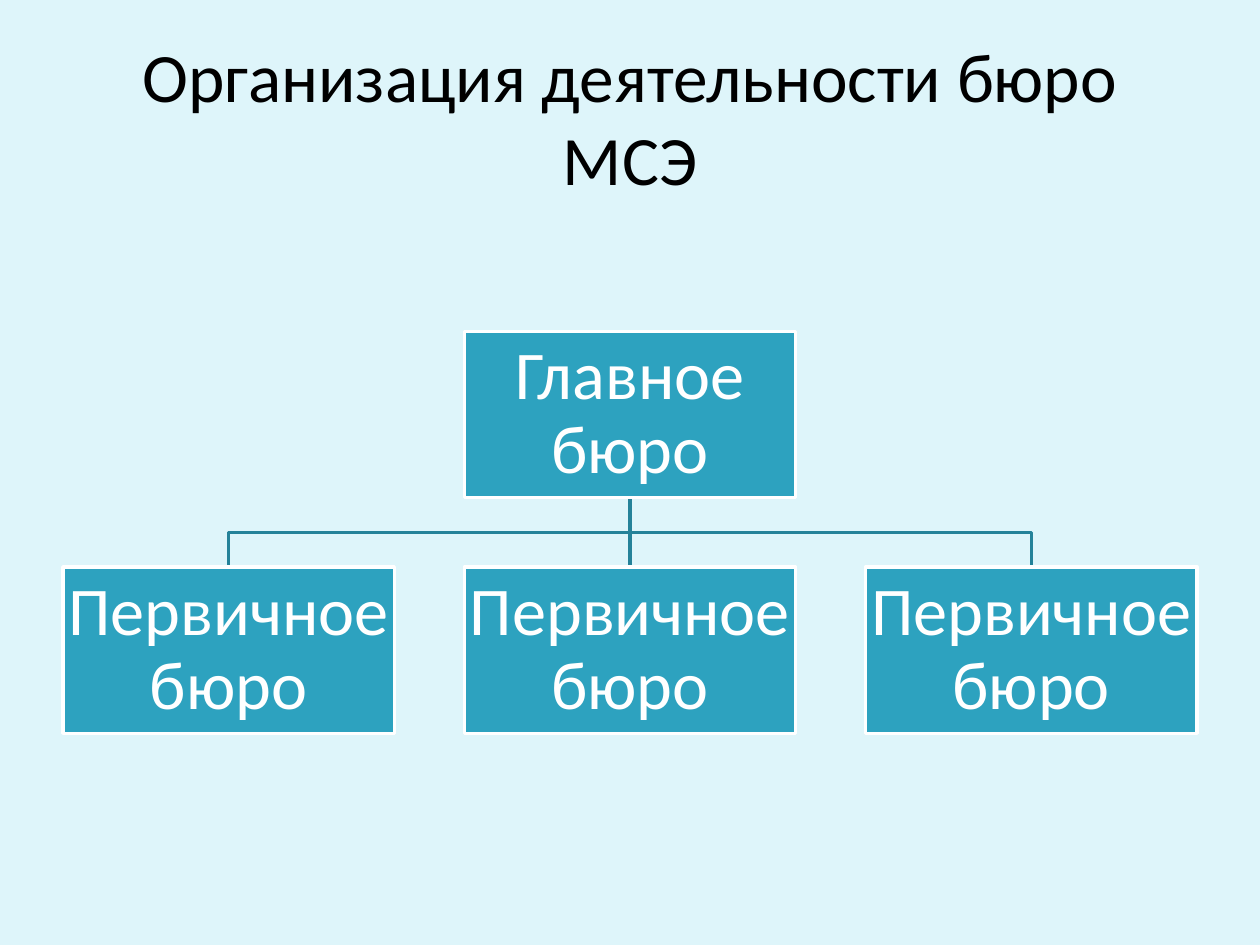
from lxml import etree
from pptx import Presentation
from pptx.dml.color import RGBColor
from pptx.enum.shapes import MSO_CONNECTOR, MSO_SHAPE
from pptx.enum.text import MSO_ANCHOR, MSO_AUTO_SIZE, PP_ALIGN
from pptx.oxml.ns import qn
from pptx.util import Inches, Pt

STRAIGHT, RECTANGLE = MSO_CONNECTOR.STRAIGHT, MSO_SHAPE.RECTANGLE
MIDDLE, CENTER, NO_AUTOFIT = MSO_ANCHOR.MIDDLE, PP_ALIGN.CENTER, MSO_AUTO_SIZE.NONE

BACKGROUND = RGBColor(0xDE, 0xF5, 0xFA)
TEAL = RGBColor(0x2D, 0xA2, 0xBF)
DARK_TEAL = RGBColor(0x24, 0x82, 0x99)
WHITE = RGBColor(0xFF, 0xFF, 0xFF)
BLACK = RGBColor(0x00, 0x00, 0x00)

deck = Presentation()
deck.slide_width, deck.slide_height = Inches(10), Inches(7.5)
page = deck.slides.add_slide(deck.slide_layouts[5])
page.background.fill.solid()
page.background.fill.fore_color.rgb = BACKGROUND

# Grid: three columns between the margins, two rows of boxes
margin = Inches(0.5)
box_width, box_height = Inches(2.63), Inches(1.32)
column_step = (deck.slide_width - 2 * margin - box_width) // 2
columns = [margin + column_step * index for index in range(3)]
top_row, bottom_row = Inches(2.63), Inches(4.5)
center_x = deck.slide_width // 2
trunk_top = top_row + box_height
branch_y = (trunk_top + bottom_row) // 2


def write_text(shape, text, size, color):
    frame = shape.text_frame
    frame.text = text
    frame_format = {"word_wrap": True, "auto_size": NO_AUTOFIT, "vertical_anchor": MIDDLE}
    for name, value in frame_format.items():
        setattr(frame, name, value)
    para = frame.paragraphs[0]
    para.alignment = CENTER
    span = para.runs[0]
    for name, value in {"name": "Calibri", "size": Pt(size)}.items():
        setattr(span.font, name, value)
    span.font.color.rgb = color
    return frame


# Title
title = page.shapes.title
title.left, title.top = margin, Inches(0.3)
title.width, title.height = deck.slide_width - 2 * margin, Inches(1.25)
write_text(title, "Организация деятельности бюро МСЭ", 39.6, BLACK)

# Straight line to the middle box, bent lines to the outer ones
trunk = page.shapes.add_connector(STRAIGHT, center_x, trunk_top, center_x, bottom_row)
etree.SubElement(trunk.element.spPr, qn("a:effectLst"))
links = [trunk]
for column in (columns[0], columns[2]):
    end_x = column + box_width // 2
    builder = page.shapes.build_freeform(center_x, trunk_top)
    builder.add_line_segments(
        [(center_x, branch_y), (end_x, branch_y), (end_x, bottom_row)], close=False
    )
    branch = builder.convert_to_shape()
    branch.fill.background()
    branch.shadow.inherit = False
    links.append(branch)
for link in links:
    link.line.color.rgb = DARK_TEAL
    link.line.width = Pt(2)

# Boxes
offices = [("Главное бюро", columns[1], top_row)]
offices += [("Первичное бюро", column, bottom_row) for column in columns]
for label, left, top in offices:
    box = page.shapes.add_shape(RECTANGLE, left, top, box_width, box_height)
    box.shadow.inherit = False
    box.fill.solid()
    box.fill.fore_color.rgb = TEAL
    box.line.color.rgb = WHITE
    box.line.width = Pt(2)
    frame = write_text(box, label, 39, WHITE)
    for side in ("left", "right", "top", "bottom"):
        setattr(frame, f"margin_{side}", Inches(0.03))
    frame.paragraphs[0].line_spacing = 0.9

deck.save("out.pptx")
